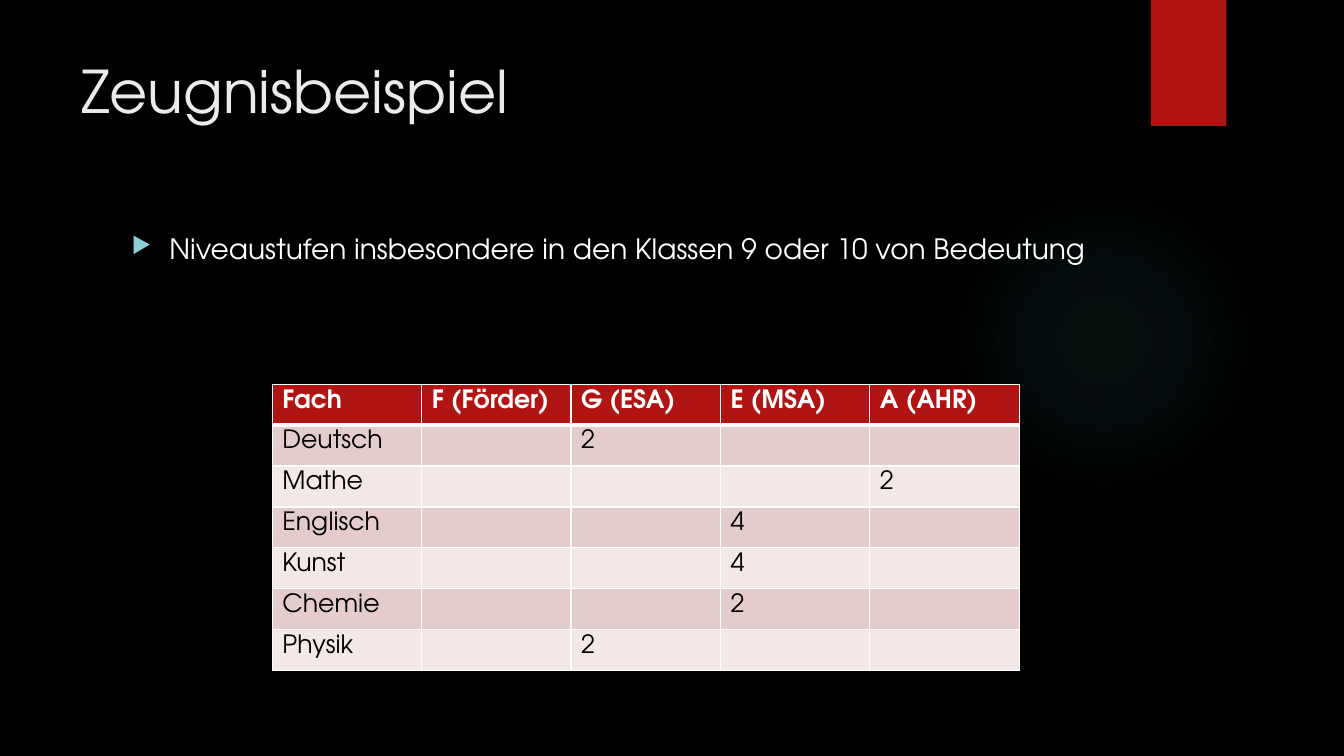
import pptx
import pptx.dml.color
import pptx.enum.shapes
import pptx.oxml
import pptx.oxml.ns
import pptx.util
from lxml import etree

Pt = pptx.util.Pt
FONT = "TeX Gyre Adventor"
COLORS = {
    "background": "000000",
    "glow": "50B9C1",
    "accent": "B01513",
    "title": "EBEBEB",
    "light": "FFFFFF",
    "dark": "000000",
    "bullet": "8AD0D6",
    "odd_row": "E4CCCC",
    "even_row": "F2E8E7",
}
GRADES = [
    ["Fach", "F (Förder)", "G (ESA)", "E (MSA)", "A (AHR)"],
    ["Deutsch", "", "2", "", ""],
    ["Mathe", "", "", "", "2"],
    ["Englisch", "", "", "4", ""],
    ["Kunst", "", "", "4", ""],
    ["Chemie", "", "", "2", ""],
    ["Physik", "", "2", "", ""],
]


def color(name):
    return pptx.dml.color.RGBColor.from_string(COLORS[name])


def add_xml(parent, markup):
    namespaces = pptx.oxml.ns.nsdecls("a")
    holder = pptx.oxml.parse_xml(f"<a:holder {namespaces}>{markup}</a:holder>")
    for element in list(holder):
        parent.append(element)


def style_font(font, size, name, bold=False):
    font.name = FONT
    font.size = Pt(size)
    font.bold = bold
    font.color.rgb = color(name)


def add_plain_shape(page, kind, bounds):
    shape = page.shapes.add_shape(kind, *map(Pt, bounds))
    shape.shadow.inherit = False
    shape.line.fill.background()
    return shape


def add_decoration(page, left, top, size):
    kinds = pptx.enum.shapes.MSO_SHAPE
    glow = add_plain_shape(page, kinds.OVAL, (left, top, size, size))
    glow.fill.gradient()
    gradient = glow.fill._xPr.find(pptx.oxml.ns.qn("a:gradFill"))
    for child in list(gradient):
        gradient.remove(child)
    stops = "".join(
        f'<a:gs pos="{place * 1000}"><a:srgbClr val="{COLORS["glow"]}">'
        f'<a:alpha val="{alpha * 1000}"/></a:srgbClr></a:gs>'
        for place, alpha in ((0, 7), (36, 6), (69, 0), (100, 0))
    )
    add_xml(
        gradient,
        f'<a:gsLst>{stops}</a:gsLst><a:path path="circle">'
        '<a:fillToRect l="50000" t="50000" r="50000" b="50000"/></a:path>',
    )
    ribbon = add_plain_shape(page, kinds.RECTANGLE, (left + 144.5, 0, 54, 90))
    ribbon.fill.solid()
    ribbon.fill.fore_color.rgb = color("accent")


def add_text(page, bounds, text, size, name, bulleted=False):
    box = page.shapes.add_textbox(*map(Pt, bounds))
    box.text_frame.word_wrap = True
    box.text_frame.text = text
    para = box.text_frame.paragraphs[0]
    if bulleted:
        properties = para._p.get_or_add_pPr()
        properties.set("marL", str(Pt(27)))
        properties.set("indent", str(-Pt(27)))
        add_xml(
            properties,
            f'<a:buClr><a:srgbClr val="{COLORS["bullet"]}"/></a:buClr>'
            '<a:buSzPct val="80000"/><a:buChar char="▶"/>',
        )
    for span in para.runs:
        style_font(span.font, size, name)


def set_borders(cell, widths):
    properties = cell._tc.get_or_add_tcPr()
    for index, (side, width) in enumerate(widths.items()):
        line = etree.Element(pptx.oxml.ns.qn(f"a:ln{side}"), w=str(Pt(width)))
        add_xml(
            line,
            f'<a:solidFill><a:srgbClr val="{COLORS["light"]}"/></a:solidFill>',
        )
        properties.insert(index, line)


def add_grades(page, left, top, width, height):
    frame = page.shapes.add_table(
        len(GRADES), len(GRADES[0]), Pt(left), Pt(top), Pt(width), Pt(height)
    )
    table = frame.table
    for column in table.columns:
        column.width = Pt(width / len(GRADES[0]))
    for row_index, values in enumerate(GRADES):
        table.rows[row_index].height = Pt(height / len(GRADES))
        header = row_index == 0
        fill = "accent" if header else "odd_row" if row_index % 2 else "even_row"
        for column_index, value in enumerate(values):
            cell = table.cell(row_index, column_index)
            cell.margin_left = cell.margin_right = Pt(7.2)
            cell.margin_top = cell.margin_bottom = Pt(3.6)
            cell.fill.solid()
            cell.fill.fore_color.rgb = color(fill)
            set_borders(
                cell,
                {
                    "L": 1,
                    "R": 1,
                    "T": 3 if row_index == 1 else 1,
                    "B": 3 if header else 1,
                },
            )
            cell.text_frame.text = value
            para = cell.text_frame.paragraphs[0]
            style_font(para.font, 18, "light" if header else "dark", header)
            for span in para.runs:
                style_font(span.font, 18, "light" if header else "dark", header)


def main():
    deck = pptx.Presentation()
    deck.slide_width, deck.slide_height = Pt(960), Pt(540)
    page = deck.slides.add_slide(deck.slide_layouts[6])
    page.background.fill.solid()
    page.background.fill.fore_color.rgb = color("background")
    add_decoration(page, 677.5, 131.8, 221.8)
    add_text(page, (51, 35.5, 741, 110), "Zeugnisbeispiel", 42, "title")
    add_text(
        page,
        (87, 162, 704, 330.5),
        "Niveaustufen insbesondere in den Klassen 9 oder 10 von Bedeutung",
        20,
        "light",
        bulleted=True,
    )
    add_grades(page, 194.5, 274.5, 533.5, 204.4)
    deck.save("out.pptx")


if __name__ == "__main__":
    main()
